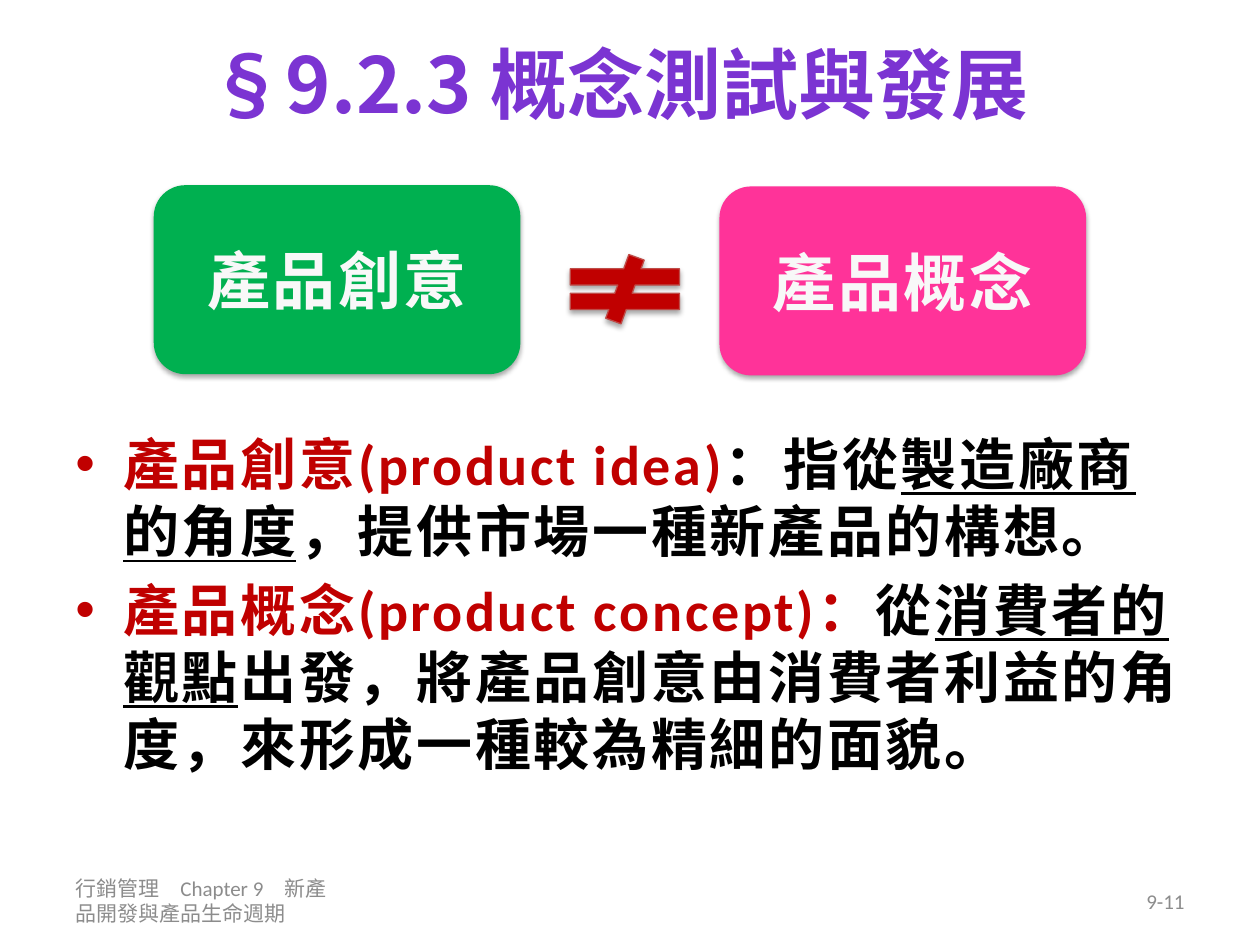
from dataclasses import dataclass

from lxml import etree
from pptx import Presentation
from pptx.dml.color import RGBColor
from pptx.enum.shapes import MSO_SHAPE
from pptx.enum.text import MSO_ANCHOR, PP_ALIGN
from pptx.oxml.ns import qn
from pptx.util import Inches, Pt

ROUNDED = MSO_SHAPE.FLOWCHART_ALTERNATE_PROCESS
NOT_EQUAL = MSO_SHAPE.MATH_NOT_EQUAL
MIDDLE, TOP = MSO_ANCHOR.MIDDLE, MSO_ANCHOR.TOP
LEFT, CENTER, RIGHT = PP_ALIGN.LEFT, PP_ALIGN.CENTER, PP_ALIGN.RIGHT


@dataclass(frozen=True)
class Theme:
    """Colours, fonts and type sizes of the slide."""

    purple: str = "7B34D2"
    green: str = "00B050"
    pink: str = "FF3399"
    red: str = "C00000"
    red_edge: str = "BF4C48"
    black: str = "000000"
    pale: str = "F8F8F8"
    grey: str = "8C8C8C"
    latin: str = "Calibri"
    asian: str = "Noto Sans CJK SC"
    title_size: int = 44
    card_size: int = 36
    body_size: int = 32
    footer_size: int = 12
    tracking: int = 150


THEME = Theme()

DEFINITIONS = [
    [
        ("產品創意(product idea)", THEME.red, False),
        ("：指從", THEME.black, False),
        ("製造廠商的角度", THEME.black, True),
        ("，提供市場一種新產品的構想。", THEME.black, False),
    ],
    [
        ("產品概念(product concept)：", THEME.red, False),
        ("從", THEME.black, False),
        ("消費者的觀點", THEME.black, True),
        ("出發，將產品創意由消費者利益的角度，來形成一種較為精細的面貌。", THEME.black, False),
    ],
]


def style_span(span, size, color, bold=False, tracking=0, latin=THEME.latin):
    """Format one run, with a matching East Asian font."""
    span.font.size = Pt(size)
    span.font.bold = bold
    span.font.name = latin
    span.font.color.rgb = RGBColor.from_string(color)
    properties = span.font._element
    if tracking:
        properties.set("spc", str(tracking))
    asian = etree.Element(qn("a:ea"), typeface=THEME.asian)
    properties.find(qn("a:latin")).addnext(asian)


def write_line(shape, text, align, **style):
    """Put one formatted, vertically centred paragraph in a shape."""
    frame = shape.text_frame
    frame.word_wrap = True
    frame.vertical_anchor = MIDDLE
    frame.text = text
    para = frame.paragraphs[0]
    para.alignment = align
    style_span(para.runs[0], **style)


def add_shadow(shape):
    """Give a shape a soft shadow falling straight down."""
    shape.shadow.inherit = False
    effects = shape._element.spPr.find(qn("a:effectLst"))
    shadow = etree.SubElement(
        effects, qn("a:outerShdw"), blurRad=str(Pt(3.1)), dist=str(Pt(1.8)),
        dir="5400000", rotWithShape="0")
    color = etree.SubElement(shadow, qn("a:srgbClr"), val=THEME.black)
    etree.SubElement(color, qn("a:alpha"), val="35000")


def add_filled(page, kind, area, fill):
    """Add a filled, shadowed preset shape without an outline."""
    shape = page.shapes.add_shape(kind, *map(Inches, area))
    shape.fill.solid()
    shape.fill.fore_color.rgb = RGBColor.from_string(fill)
    shape.line.fill.background()
    add_shadow(shape)
    return shape


def add_card(page, left, top, text, fill):
    """Add a rounded card naming one term."""
    card = add_filled(page, ROUNDED, (left, top, 2.91, 1.5), fill)
    write_line(card, text, CENTER, size=THEME.card_size, color=THEME.pale,
               bold=True, tracking=THEME.tracking)


def add_not_equal(page):
    """Add the not-equal sign between the cards."""
    sign = add_filled(page, NOT_EQUAL, (4.37, 2.02, 1.18, 0.55), THEME.red)
    sign.line.color.rgb = RGBColor.from_string(THEME.red_edge)
    sign.line.width = Pt(0.75)


def set_title(page, text):
    """Place and format the title placeholder."""
    title = page.shapes.title
    title.left, title.top = Inches(0.5), Inches(0)
    title.width, title.height = Inches(8.83), Inches(1.31)
    write_line(title, text, CENTER, size=THEME.title_size, color=THEME.purple,
               bold=True, latin=THEME.asian)


def add_bullet(para):
    """Give a paragraph a hanging round bullet."""
    properties = para._p.get_or_add_pPr()
    properties.set("marL", str(Inches(0.38)))
    properties.set("indent", str(-Inches(0.38)))
    etree.SubElement(properties, qn("a:buFont"), typeface="Arial")
    etree.SubElement(properties, qn("a:buChar"), char="•")


def add_definitions(page, definitions):
    """Add the bulleted definitions of both terms."""
    box = page.shapes.add_textbox(Inches(0.5), Inches(3.36), Inches(9), Inches(3.34))
    frame = box.text_frame
    frame.word_wrap = True
    frame.vertical_anchor = TOP
    for index, pieces in enumerate(definitions):
        para = frame.add_paragraph() if index else frame.paragraphs[0]
        add_bullet(para)
        para.alignment = LEFT
        para.space_before = Pt(6.4 if index else 0)
        for text, color, underlined in pieces:
            span = para.add_run()
            span.text = text
            style_span(span, THEME.body_size, color, True, THEME.tracking)
            span.font.underline = underlined


def add_footer(page, left, text, align):
    """Add one small grey footer text."""
    box = page.shapes.add_textbox(Inches(left), Inches(6.95), Inches(2.33), Inches(0.4))
    write_line(box, text, align, size=THEME.footer_size, color=THEME.grey)


def main():
    """Build and save the slide."""
    deck = Presentation()
    deck.slide_width, deck.slide_height = Inches(10), Inches(7.5)
    page = deck.slides.add_slide(deck.slide_layouts[5])
    set_title(page, "§9.2.3 概念測試與發展")
    add_definitions(page, DEFINITIONS)
    add_footer(page, 0.5, "行銷管理　Chapter 9　新產品開發與產品生命週期", LEFT)
    add_footer(page, 7.17, "9-11", RIGHT)
    add_card(page, 1.22, 1.47, "產品創意", THEME.green)
    add_card(page, 5.71, 1.48, "產品概念", THEME.pink)
    add_not_equal(page)
    deck.save("out.pptx")


if __name__ == "__main__":
    main()
